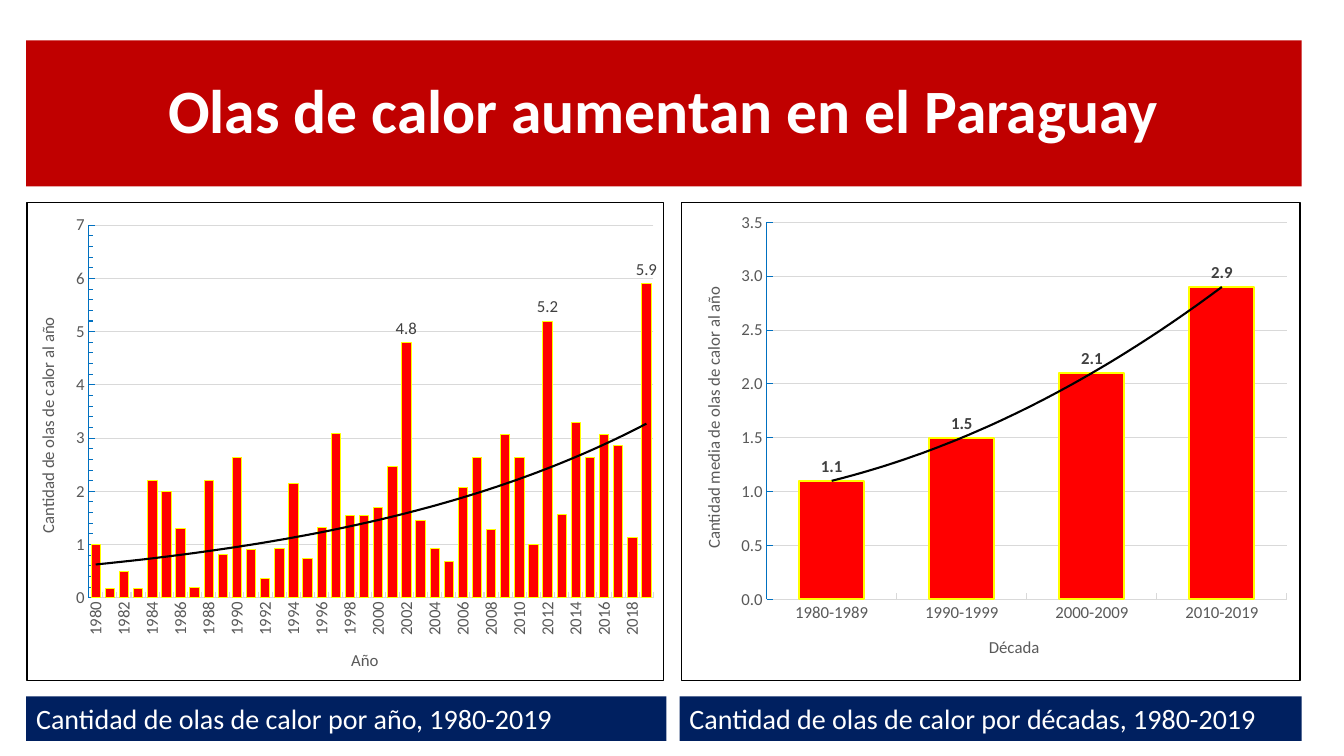
"""Build the slide on rising heat waves in Paraguay, by year and by decade."""
from lxml.etree import fromstring
from pptx import Presentation
from pptx.chart.data import CategoryChartData
from pptx.dml.color import RGBColor
from pptx.enum.chart import XL_CHART_TYPE, XL_LABEL_POSITION, XL_TICK_MARK
from pptx.enum.shapes import MSO_SHAPE
from pptx.enum.text import MSO_ANCHOR, MSO_AUTO_SIZE, PP_ALIGN
from pptx.oxml.ns import nsdecls
from pptx.util import Inches, Pt

COLORS = {"title": "C00000", "caption": "002060", "white": "FFFFFF", "black": "000000",
          "bar": "FF0000", "outline": "FFFF00", "axis": "0070C0", "grid": "D9D9D9",
          "text": "595959", "label": "404040"}
FONT = "Calibri"
YEAR_VALUES = [1, 0.17, 0.5, 0.17, 2.2, 2, 1.3, 0.2, 2.2, 0.82,
               2.64, 0.91, 0.36, 0.92, 2.15, 0.75, 1.33, 3.08, 1.54, 1.54,
               1.69, 2.46, 4.8, 1.46, 0.92, 0.69, 2.08, 2.64, 1.29, 3.07,
               2.64, 1, 5.2, 1.57, 3.29, 2.64, 3.07, 2.86, 1.14, 5.9]
PANELS = [
    {"left": 0.26, "width": 6.33, "caption_left": 0.26, "caption_width": 6.35,
     "caption": "Cantidad de olas de calor por año, 1980-2019",
     "categories": [str(year) for year in range(1980, 2020)], "values": YEAR_VALUES,
     "titles": ("Año", "Cantidad de olas de calor al año"), "format": "0",
     "top": 7, "step": 1, "gap": 50, "overlap": 0, "outline": 0.5,
     "trend": '<c:trendlineType val="exp"/>', "plot": (0.097, 0.048, 0.887, 0.779)},
    {"left": 6.75, "width": 6.15, "caption_left": 6.74, "caption_width": 6.17,
     "caption": "Cantidad de olas de calor por décadas, 1980-2019",
     "categories": [f"{year}-{year + 9}" for year in range(1980, 2020, 10)],
     "values": [1.1, 1.5, 2.1, 2.9],
     "titles": ("Década", "Cantidad media de olas de calor al año"), "format": "0.0",
     "top": 3.5, "step": 0.5, "gap": 100, "overlap": -27, "outline": 1.5,
     "trend": '<c:trendlineType val="poly"/><c:order val="2"/>',
     "plot": (0.138, 0.042, 0.841, 0.788)},
]


def style_font(font, size, color, bold=False):
    font.name = FONT
    font.size = Pt(size)
    font.bold = bold
    font.color.rgb = RGBColor.from_string(COLORS[color])


def style_line(line, color, width):
    line.color.rgb = RGBColor.from_string(COLORS[color])
    line.width = Pt(width)


deck = Presentation()
deck.slide_width = Inches(13.33)
deck.slide_height = Inches(7.5)
page = deck.slides.add_slide(deck.slide_layouts[5])

title = page.shapes.title
title.left, title.top = Inches(0.26), Inches(0.4)
title.width, title.height = Inches(12.65), Inches(1.45)
title.fill.solid()
title.fill.fore_color.rgb = RGBColor.from_string(COLORS["title"])
title.text_frame.vertical_anchor = MSO_ANCHOR.MIDDLE
para = title.text_frame.paragraphs[0]
para.alignment = PP_ALIGN.CENTER
para.line_spacing = 0.9
span = para.add_run()
span.text = "Olas de calor aumentan en el Paraguay"
style_font(span.font, 44, "white", True)

for panel in PANELS:
    yearly = len(panel["values"]) > 4
    data = CategoryChartData()
    data.categories = panel["categories"]
    data.add_series("Olas de calor", panel["values"])
    chart = page.shapes.add_chart(
        XL_CHART_TYPE.COLUMN_CLUSTERED, Inches(panel["left"]), Inches(2),
        Inches(panel["width"]), Inches(4.76), data).chart
    chart.has_legend = False
    chart.has_title = False
    style_font(chart.font, 12, "black")

    plot = chart.plots[0]
    plot.gap_width = panel["gap"]
    plot.overlap = panel["overlap"]
    plot.vary_by_categories = False
    series = plot.series[0]
    series.format.fill.solid()
    series.format.fill.fore_color.rgb = RGBColor.from_string(COLORS["bar"])
    style_line(series.format.line, "outline", panel["outline"])

    axes = [chart.category_axis, chart.value_axis]
    for axis, axis_title, line_color in zip(axes, panel["titles"], ("grid", "axis")):
        axis.major_tick_mark = XL_TICK_MARK.INSIDE
        axis.minor_tick_mark = XL_TICK_MARK.NONE
        style_font(axis.tick_labels.font, 12, "text")
        style_line(axis.format.line, line_color, 0.75)
        span = axis.axis_title.text_frame.paragraphs[0].add_run()
        span.text = axis_title
        style_font(span.font, 12, "text")

    value_axis = chart.value_axis
    value_axis.minimum_scale = 0
    value_axis.maximum_scale = panel["top"]
    value_axis.major_unit = panel["step"]
    value_axis.tick_labels.number_format = panel["format"]
    value_axis.tick_labels.number_format_is_linked = False
    style_line(value_axis.major_gridlines.format.line, "grid", 0.75)

    labels = series.data_labels if not yearly else None
    if yearly:
        value_axis.minor_tick_mark = XL_TICK_MARK.INSIDE
        value_axis.minor_unit = 0.2
        for index, value in enumerate(panel["values"]):
            if value > 4:
                label = series.points[index].data_label
                style_font(label.font, 12, "label")
                label.position = XL_LABEL_POSITION.OUTSIDE_END
        series.data_labels.show_value = False
    else:
        labels.show_value = True
        labels.number_format = "0.0"
        labels.number_format_is_linked = False
        labels.position = XL_LABEL_POSITION.OUTSIDE_END
        style_font(labels.font, 12, "label", True)

    root = chart.element if hasattr(chart, "element") else chart._chartSpace
    rotated = root.xpath("c:chart//c:valAx/c:title//a:bodyPr")
    if yearly:
        rotated += root.xpath("c:chart//c:catAx/c:txPr/a:bodyPr")
        root.xpath("c:chart//c:catAx/c:noMultiLvlLbl")[0].addprevious(
            fromstring(f'<c:tickLblSkip {nsdecls("c")} val="2"/>'))
    for body in rotated:
        body.set("rot", "-5400000")
        body.set("vert", "horz")

    root.xpath("c:chart//c:ser/c:cat")[0].addprevious(fromstring(
        f'<c:trendline {nsdecls("c", "a")}><c:spPr><a:ln w="{Pt(1.5)}"><a:solidFill>'
        f'<a:srgbClr val="{COLORS["black"]}"/></a:solidFill></a:ln></c:spPr>'
        f'{panel["trend"]}<c:dispRSqr val="0"/><c:dispEq val="0"/></c:trendline>'))
    root.xpath("c:chart")[0].addnext(fromstring(
        f'<c:spPr {nsdecls("c", "a")}><a:solidFill><a:srgbClr val="{COLORS["white"]}"/>'
        f'</a:solidFill><a:ln w="{Pt(1)}"><a:solidFill><a:srgbClr val="{COLORS["black"]}"/>'
        '</a:solidFill></a:ln></c:spPr>'))
    area = root.xpath("c:chart/c:plotArea")[0]
    for layout in area.xpath("c:layout"):
        area.remove(layout)
    bounds = "".join(f'<c:{side} val="{share}"/>' for side, share in zip("xywh", panel["plot"]))
    area.insert(0, fromstring(
        f'<c:layout {nsdecls("c")}><c:manualLayout><c:layoutTarget val="inner"/>'
        f'<c:xMode val="edge"/><c:yMode val="edge"/>{bounds}</c:manualLayout></c:layout>'))

    box = page.shapes.add_shape(
        MSO_SHAPE.RECTANGLE, Inches(panel["caption_left"]), Inches(6.91),
        Inches(panel["caption_width"]), Inches(0.44))
    box.shadow.inherit = False
    box.fill.solid()
    box.fill.fore_color.rgb = RGBColor.from_string(COLORS["caption"])
    box.line.fill.background()
    box.text_frame.word_wrap = True
    box.text_frame.auto_size = MSO_AUTO_SIZE.SHAPE_TO_FIT_TEXT
    para = box.text_frame.paragraphs[0]
    para.alignment = PP_ALIGN.LEFT
    span = para.add_run()
    span.text = panel["caption"]
    style_font(span.font, 20, "white")

deck.save("out.pptx")
